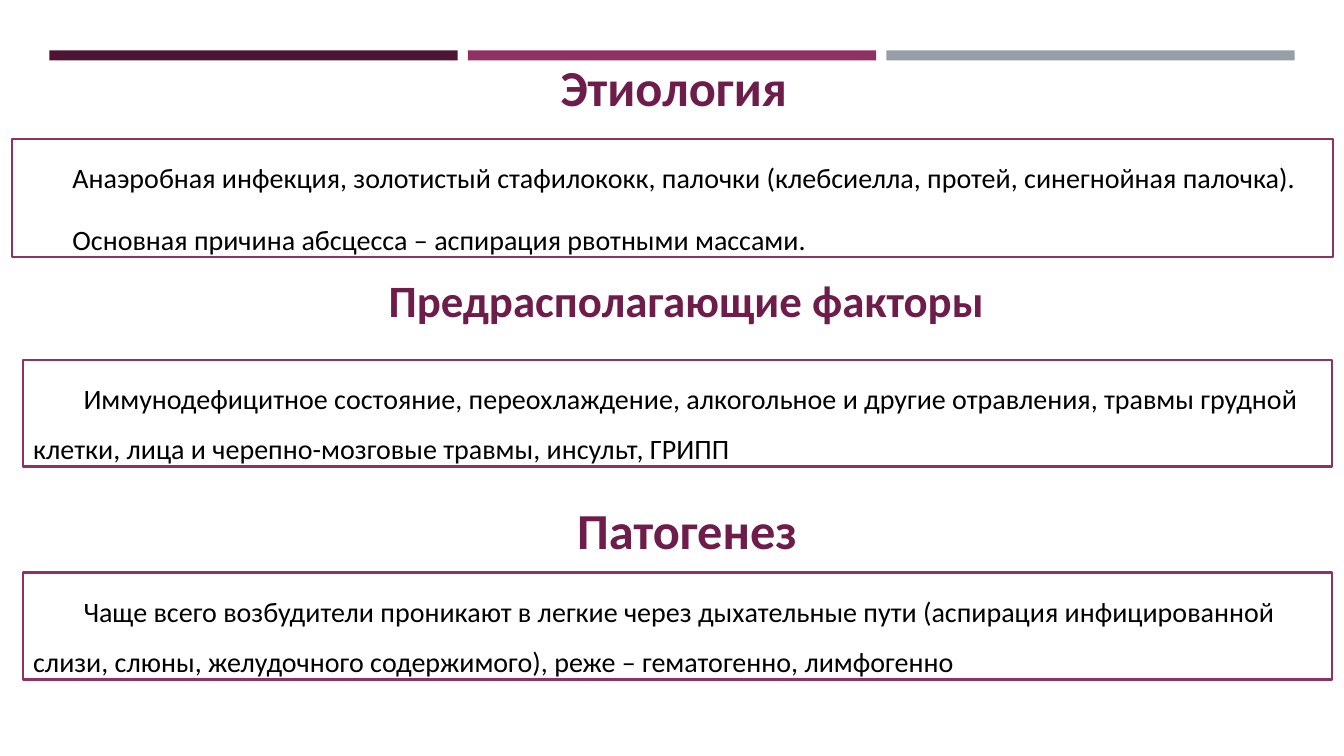
"""Builds a slide on the etiology, predisposing factors and pathogenesis of lung abscess."""
from pptx import Presentation
from pptx.dml.color import RGBColor
from pptx.enum.shapes import MSO_SHAPE
from pptx.enum.text import MSO_ANCHOR, MSO_AUTO_SIZE, PP_ALIGN
from pptx.util import Emu, Pt

PX = 9144
THEME = {
    "font": "Calibri",
    "bars": ("4D1434", "903163", "969FA7"),
    "heading": "6E1D4A",
    "text": "000000",
    "paper": "FFFFFF",
    "border": "903163",
    "large": 36,
    "medium": 32,
    "body": 20,
}
FRAME = {"word_wrap": True, "auto_size": MSO_AUTO_SIZE.NONE, "vertical_anchor": MSO_ANCHOR.TOP}
BODY = {"alignment": PP_ALIGN.LEFT, "line_spacing": 1.5, "space_after": Pt(8)}


def add_box(page, place, fill, border=None):
    """Adds a filled rectangle, outlined when a border colour is given."""
    box = page.shapes.add_shape(MSO_SHAPE.RECTANGLE, *[Emu(length * PX) for length in place])
    box.shadow.inherit = False
    box.fill.solid()
    box.fill.fore_color.rgb = RGBColor.from_string(fill)
    if border:
        box.line.color.rgb = RGBColor.from_string(border)
        box.line.width = Pt(1.75)
    else:
        box.line.fill.background()
    return box


def write(box, lines, size, color, bold, layout):
    """Fills a box with formatted paragraphs and returns them."""
    frame = box.text_frame
    for name, value in FRAME.items():
        setattr(frame, name, value)
    frame.text = "\n".join(lines)
    for para in frame.paragraphs:
        for name, value in layout.items():
            setattr(para, name, value)
        span = para.runs[0]
        span.font.color.rgb = RGBColor.from_string(color)
        for name, value in {"name": THEME["font"], "size": Pt(size), "bold": bold}.items():
            setattr(span.font, name, value)
    return frame.paragraphs


deck = Presentation()
deck.slide_width, deck.slide_height = Emu(1333 * PX), Emu(750 * PX)
page = deck.slides.add_slide(deck.slide_layouts[5])

for column, color in enumerate(THEME["bars"]):
    add_box(page, (49 + 415 * column, 50, 405, 10), color)

SECTIONS = [
    ("Этиология", (546, 51, 569, 71), THEME["large"], PP_ALIGN.LEFT, (12, 138, 1310, 117), [
        "Анаэробная инфекция, золотистый стафилококк, палочки (клебсиелла, протей, синегнойная палочка).",
        "Основная причина абсцесса – аспирация рвотными массами.",
    ]),
    ("Предрасполагающие факторы", (354, 266, 654, 64), THEME["medium"], PP_ALIGN.CENTER, (23, 357, 1298, 106), [
        "Иммунодефицитное состояние, переохлаждение, алкогольное и другие отравления, "
        "травмы грудной клетки, лица и черепно-мозговые травмы, инсульт, ГРИПП",
    ]),
    ("Патогенез", (313, 490, 737, 71), THEME["large"], PP_ALIGN.CENTER, (23, 568, 1298, 106), [
        "Чаще всего возбудители проникают в легкие через дыхательные пути "
        "(аспирация инфицированной слизи, слюны, желудочного содержимого), реже – гематогенно, лимфогенно",
    ]),
]

for number, (title, title_place, size, alignment, body_place, lines) in enumerate(SECTIONS):
    lengths = [Emu(length * PX) for length in title_place]
    if number == 0:
        heading = page.shapes.title
        heading.left, heading.top, heading.width, heading.height = lengths
    else:
        heading = page.shapes.add_textbox(*lengths)
    write(heading, [title], size, THEME["heading"], True, {"alignment": alignment})

    body = add_box(page, body_place, THEME["paper"], THEME["border"])
    for para in write(body, lines, THEME["body"], THEME["text"], False, BODY):
        para._p.get_or_add_pPr().set("indent", str(50 * PX))

deck.save("out.pptx")
